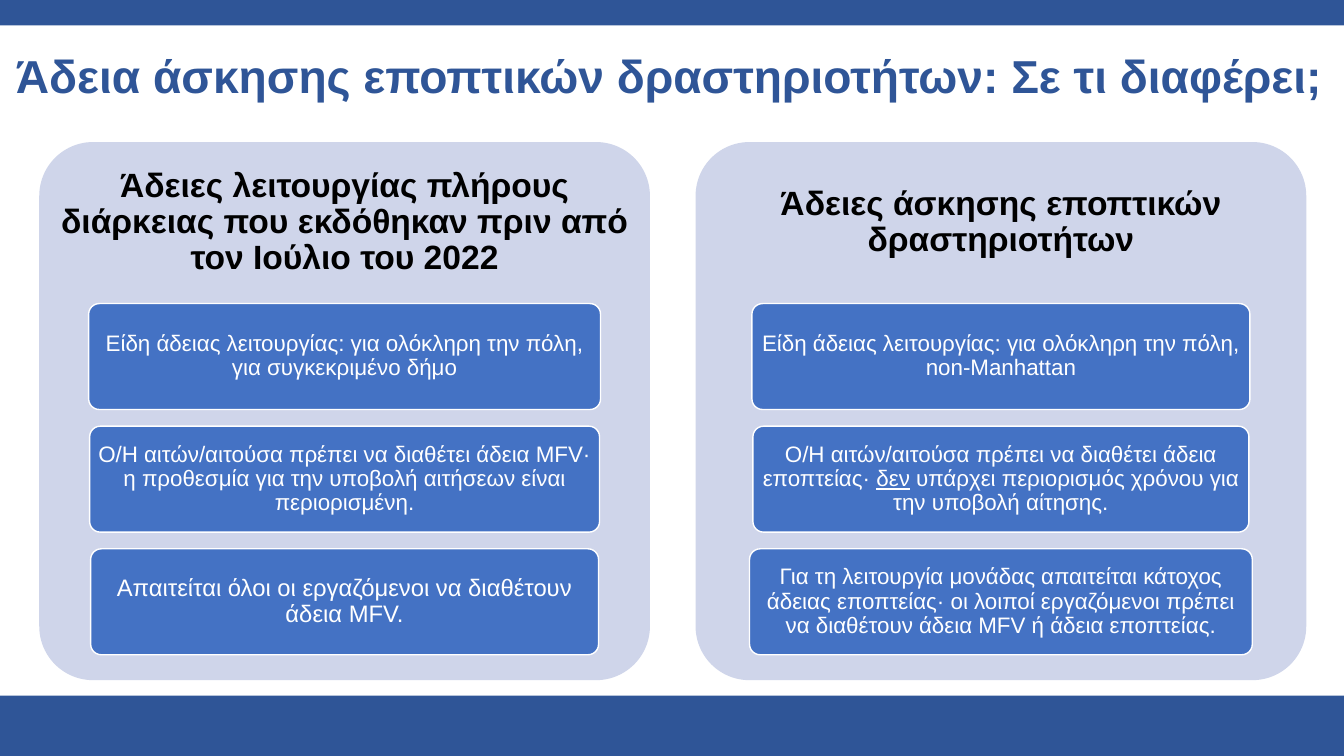
from pptx import Presentation
from pptx.dml.color import RGBColor
from pptx.enum.shapes import MSO_SHAPE
from pptx.enum.text import MSO_ANCHOR, MSO_AUTO_SIZE, PP_ALIGN
from pptx.util import Cm, Pt

RECTANGLE = MSO_SHAPE.RECTANGLE
ROUNDED = MSO_SHAPE.ROUNDED_RECTANGLE
MIDDLE = MSO_ANCHOR.MIDDLE
NO_AUTOFIT = MSO_AUTO_SIZE.NONE
CENTER = PP_ALIGN.CENTER

NAVY = RGBColor(0x2F, 0x55, 0x97)
BLUE = RGBColor(0x44, 0x72, 0xC4)
PALE_BLUE = RGBColor(0xCF, 0xD5, 0xEA)
WHITE = RGBColor(0xFF, 0xFF, 0xFF)
BLACK = RGBColor(0x00, 0x00, 0x00)

SLIDE_WIDTH, SLIDE_HEIGHT = Cm(33.87), Cm(19.05)
TOP_BAND, BOTTOM_BAND = Cm(0.64), Cm(1.52)
PANEL_TOP, PANEL_WIDTH, PANEL_HEIGHT = Cm(3.58), Cm(15.39), Cm(13.56)
HEADING_HEIGHT = Cm(4.07)
CARD_HEIGHT, CARD_PITCH = Cm(2.67), Cm(3.09)
CORNER = 0.1

TITLE = "Άδεια άσκησης εποπτικών δραστηριοτήτων: Σε τι διαφέρει;"

# Each panel: left edge, heading, cards as (width, text size, text pieces);
# every second piece of a card is underlined.
PANELS = [
    (Cm(0.99), "Άδειες λειτουργίας πλήρους διάρκειας που εκδόθηκαν πριν από τον Ιούλιο του 2022", [
        (Cm(12.9), 16, ["Είδη άδειας λειτουργίας: για ολόκληρη την πόλη, για συγκεκριμένο δήμο"]),
        (Cm(12.85), 16, ["Ο/Η αιτών/αιτούσα πρέπει να διαθέτει άδεια MFV· η προθεσμία για την "
                         "υποβολή αιτήσεων είναι περιορισμένη."]),
        (Cm(12.8), 17, ["Απαιτείται όλοι οι εργαζόμενοι να διαθέτουν άδεια MFV."]),
    ]),
    (Cm(17.53), "Άδειες άσκησης εποπτικών δραστηριοτήτων", [
        (Cm(12.55), 16, ["Είδη άδειας λειτουργίας: για ολόκληρη την πόλη, non-Manhattan"]),
        (Cm(12.5), 16, ["Ο/Η αιτών/αιτούσα πρέπει να διαθέτει άδεια εποπτείας· ", "δεν",
                        " υπάρχει περιορισμός χρόνου για την υποβολή αίτησης."]),
        (Cm(12.67), 16, ["Για τη λειτουργία μονάδας απαιτείται κάτοχος άδειας εποπτείας· οι λοιποί "
                         "εργαζόμενοι πρέπει να διαθέτουν άδεια MFV ή άδεια εποπτείας."]),
    ]),
]


def set_attributes(target, values):
    for name, value in values.items():
        setattr(target, name, value)


def write_text(shape, pieces, size, color, bold=False, margin=Cm(0.25)):
    """Write centred text; every second piece is underlined."""
    frame = shape.text_frame
    set_attributes(frame, {
        "word_wrap": True, "auto_size": NO_AUTOFIT, "vertical_anchor": MIDDLE,
        "margin_left": margin, "margin_right": margin,
        "margin_top": margin, "margin_bottom": margin,
    })
    paragraph = frame.paragraphs[0]
    set_attributes(paragraph, {"alignment": CENTER, "line_spacing": 0.9})
    for index, piece in enumerate(pieces):
        run = paragraph.add_run()
        run.text = piece
        set_attributes(run.font, {"name": "Arial", "size": Pt(size), "bold": bold})
        run.font.color.rgb = color
        if index % 2:
            run.font.underline = True


def add_block(slide, kind, box, fill, outline=None):
    shape = slide.shapes.add_shape(kind, *box)
    shape.shadow.inherit = False
    shape.fill.solid()
    shape.fill.fore_color.rgb = fill
    if outline is None:
        shape.line.fill.background()
    else:
        shape.line.color.rgb = outline
        shape.line.width = Pt(1)
    if kind == ROUNDED:
        shape.adjustments[0] = CORNER
    return shape


def add_bands(slide):
    add_block(slide, RECTANGLE, (0, 0, SLIDE_WIDTH, TOP_BAND), NAVY)
    add_block(slide, RECTANGLE,
              (0, SLIDE_HEIGHT - BOTTOM_BAND, SLIDE_WIDTH, BOTTOM_BAND), NAVY)


def fill_title(slide, left, top, width, height):
    title = slide.shapes.title
    set_attributes(title, {"left": left, "top": top, "width": width, "height": height})
    write_text(title, [TITLE], 33, NAVY, bold=True)


def add_panel(slide, left, top, width, height, heading, cards):
    add_block(slide, ROUNDED, (left, top, width, height), PALE_BLUE)
    heading_box = slide.shapes.add_textbox(left, top, width, HEADING_HEIGHT)
    write_text(heading_box, [heading], 24, BLACK, bold=True)
    for row, (card_width, size, pieces) in enumerate(cards):
        card_left = left + (width - card_width) // 2
        card_top = top + HEADING_HEIGHT + row * CARD_PITCH
        card = add_block(slide, ROUNDED, (card_left, card_top, card_width, CARD_HEIGHT),
                         BLUE, outline=WHITE)
        write_text(card, pieces, size, WHITE, margin=Cm(0.1))


def main():
    presentation = Presentation()
    set_attributes(presentation, {"slide_width": SLIDE_WIDTH, "slide_height": SLIDE_HEIGHT})
    title_only = presentation.slide_layouts[5]
    slide = presentation.slides.add_slide(title_only)
    add_bands(slide)
    fill_title(slide, Cm(-0.33), Cm(1.02), Cm(34.4), Cm(1.9))
    for left, heading, cards in PANELS:
        add_panel(slide, left, PANEL_TOP, PANEL_WIDTH, PANEL_HEIGHT, heading, cards)
    presentation.save("out.pptx")


if __name__ == "__main__":
    main()
